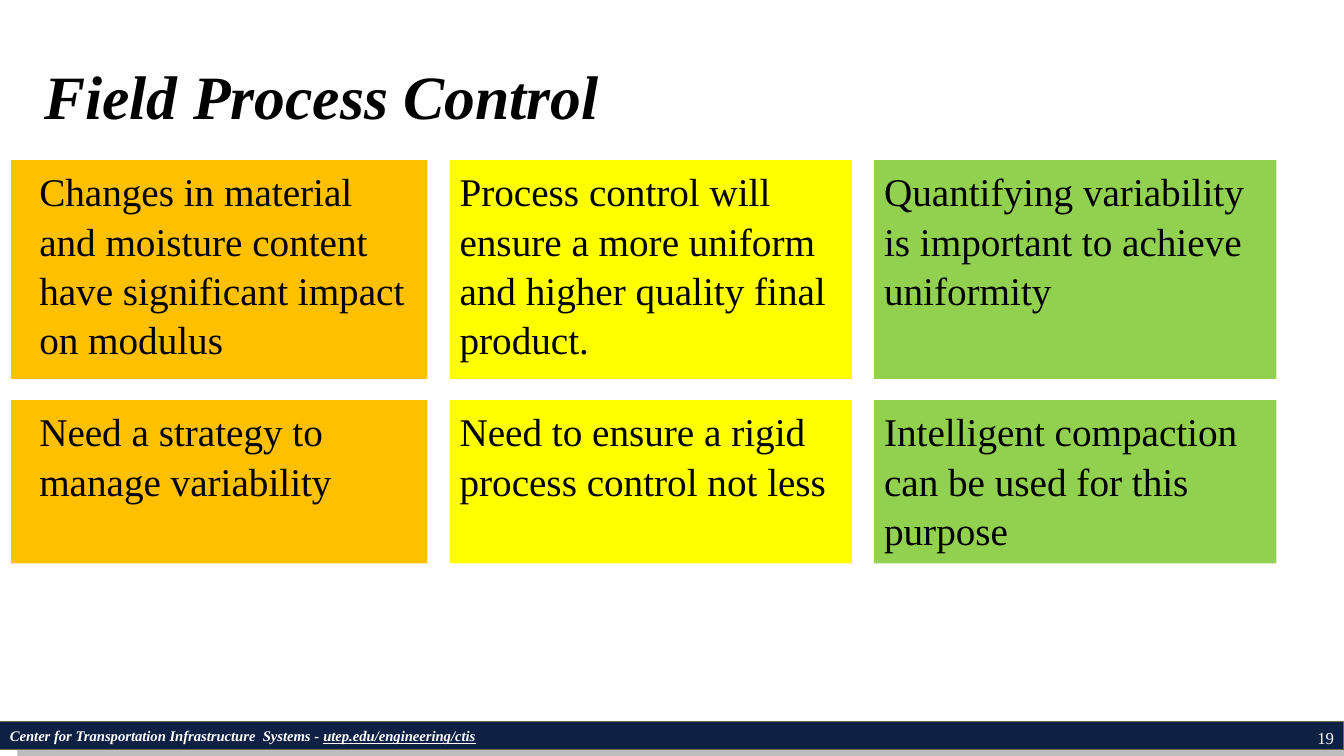
from dataclasses import dataclass

from lxml.etree import SubElement
from pptx import Presentation
from pptx.dml.color import RGBColor
from pptx.enum.shapes import MSO_SHAPE
from pptx.enum.text import MSO_ANCHOR, PP_ALIGN
from pptx.oxml.ns import qn
from pptx.util import Inches, Pt

TITLE = "Field Process Control"
COLUMNS = [  # left, width, text inset, fill colour name, texts from top to bottom
    (0.11, 4.13, 0.28, "orange", [
        "Changes in material and moisture content have significant impact on modulus",
        "Need a strategy to manage variability"]),
    (4.46, 3.99, 0.1, "yellow", [
        "Process control will ensure a more uniform and higher quality final product.",
        "Need to ensure a rigid process control not less"]),
    (8.67, 3.99, 0.1, "green", [
        "Quantifying variability is important to achieve uniformity",
        "Intelligent compaction can be used for this purpose"]),
]
ROW_HEIGHTS = [2.17, 1.62]
GRID_TOP, ROW_GAP = 1.59, 0.21
FOOTER_NAME = "Center for Transportation Infrastructure  Systems - "
FOOTER_ADDRESS = "utep.edu/engineering/ctis"
PAGE_NUMBER = "19"
SLIDE_WIDTH, SLIDE_HEIGHT = 13.33, 7.5


@dataclass(frozen=True)
class Theme:
    font: str = "Times New Roman"
    orange: str = "FFC000"
    yellow: str = "FFFF00"
    green: str = "92D050"
    ink: str = "000000"
    white: str = "FFFFFF"
    navy: str = "0E2144"
    bronze: str = "756B50"
    title_size: float = 44
    card_size: float = 28
    number_size: float = 12
    footer_size: float = 10.5


THEME = Theme()


def color(value):
    return RGBColor.from_string(value)


def format_runs(paragraph, size, ink, emphasis=False):
    for run in paragraph.runs:
        run.font.name = THEME.font
        run.font.size = Pt(size)
        run.font.color.rgb = color(ink)
        run.font.bold = run.font.italic = emphasis


def add_rectangle(slide, left, top, width, height, fill):
    shape = slide.shapes.add_shape(
        MSO_SHAPE.RECTANGLE, Inches(left), Inches(top), Inches(width), Inches(height))
    shape.shadow.inherit = False
    shape.fill.solid()
    shape.fill.fore_color.rgb = color(fill)
    shape.line.fill.background()
    shape.text_frame.word_wrap = True
    return shape


def add_card(slide, left, top, width, height, inset, fill, text):
    frame = add_rectangle(slide, left, top, width, height, fill).text_frame
    frame.margin_left = Inches(inset)
    frame.vertical_anchor = MSO_ANCHOR.TOP
    frame.text = text
    paragraph = frame.paragraphs[0]
    paragraph.alignment = PP_ALIGN.LEFT
    paragraph.line_spacing = 1.05
    format_runs(paragraph, THEME.card_size, THEME.ink)


def add_offset_shadow(shape):
    """Give the shape a sharp, diagonal shadow at 25 % opacity."""
    effects = shape.element.spPr.find(qn("a:effectLst"))
    shadow = SubElement(effects, qn("a:outerShdw"), blurRad="0", dist=str(Pt(18)),
                        dir="2700000", algn="tl", rotWithShape="0")
    shade = SubElement(shadow, qn("a:srgbClr"), val=THEME.ink)
    SubElement(shade, qn("a:alpha"), val="25000")


def add_footer(slide):
    bar = add_rectangle(slide, 0, 7.16, SLIDE_WIDTH, 0.28, THEME.navy)
    bar.line.color.rgb = color(THEME.bronze)
    bar.line.width = Pt(0.75)
    add_offset_shadow(bar)
    bar.text_frame.vertical_anchor = MSO_ANCHOR.MIDDLE
    bar.text_frame.text = FOOTER_NAME
    paragraph = bar.text_frame.paragraphs[0]
    paragraph.alignment = PP_ALIGN.LEFT
    address = paragraph.add_run()
    address.text = FOOTER_ADDRESS
    address.font.underline = True
    format_runs(paragraph, THEME.footer_size, THEME.white, emphasis=True)


def add_page_number(slide):
    box = slide.shapes.add_textbox(Inches(10.22), Inches(7.17), Inches(3.11), Inches(0.33))
    box.text_frame.word_wrap = True
    box.text_frame.text = PAGE_NUMBER
    paragraph = box.text_frame.paragraphs[0]
    paragraph.alignment = PP_ALIGN.RIGHT
    format_runs(paragraph, THEME.number_size, THEME.white)


def set_title(slide):
    title = slide.shapes.title
    title.left, title.top = Inches(0.34), Inches(0.58)
    title.width, title.height = Inches(12.3), Inches(0.73)
    title.text_frame.text = TITLE
    title.text_frame.vertical_anchor = MSO_ANCHOR.MIDDLE
    paragraph = title.text_frame.paragraphs[0]
    paragraph.alignment = PP_ALIGN.LEFT
    format_runs(paragraph, THEME.title_size, THEME.ink, emphasis=True)


def main():
    presentation = Presentation()
    presentation.slide_width = Inches(SLIDE_WIDTH)
    presentation.slide_height = Inches(SLIDE_HEIGHT)
    slide = presentation.slides.add_slide(presentation.slide_layouts[5])
    set_title(slide)
    add_footer(slide)
    for left, width, inset, fill_name, texts in COLUMNS:
        top = GRID_TOP
        for height, text in zip(ROW_HEIGHTS, texts):
            add_card(slide, left, top, width, height, inset, getattr(THEME, fill_name), text)
            top += height + ROW_GAP
    add_page_number(slide)
    presentation.save("out.pptx")


if __name__ == "__main__":
    main()
